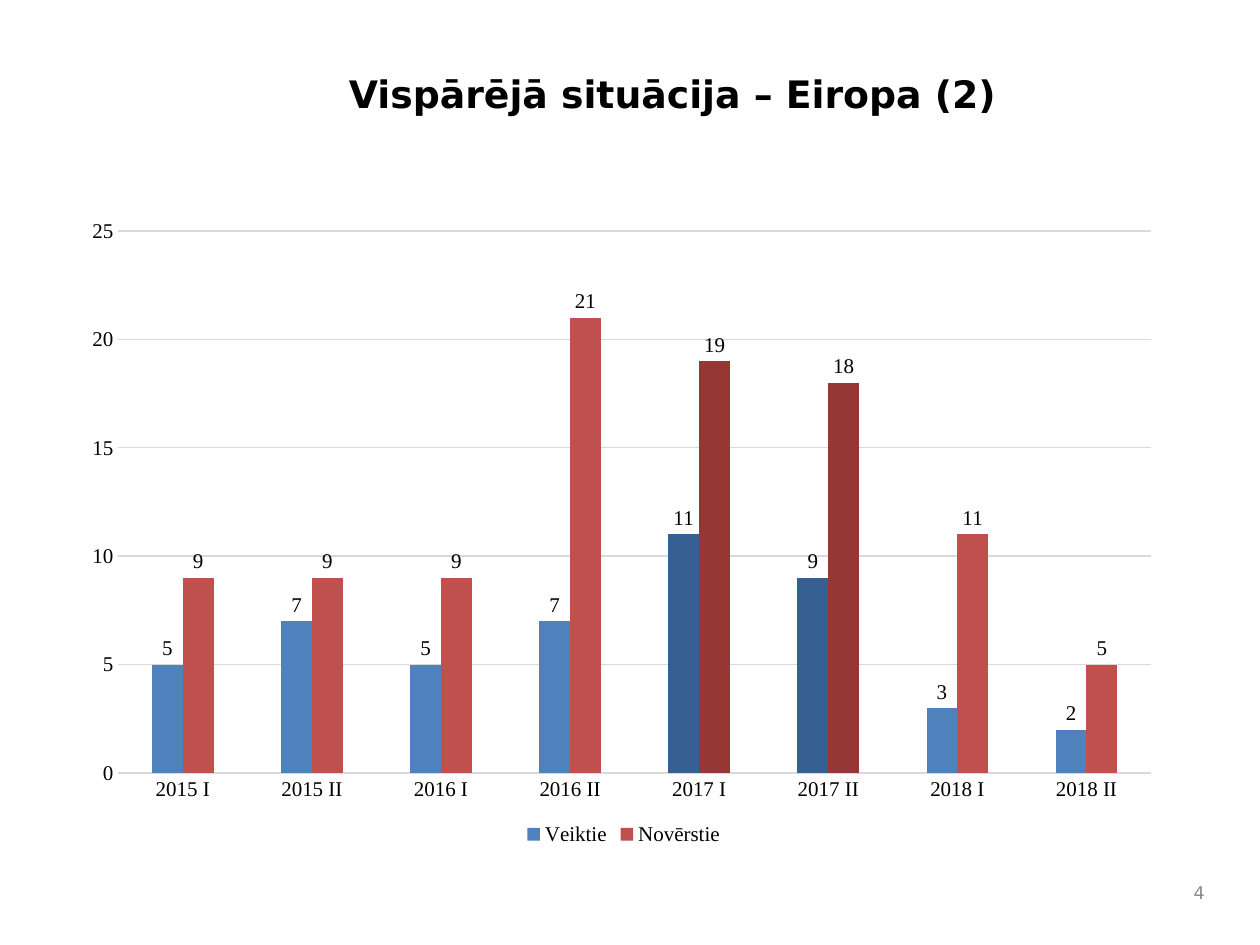
from dataclasses import dataclass

from lxml import etree
from pptx import Presentation
from pptx.chart.data import CategoryChartData
from pptx.dml.color import RGBColor
from pptx.enum.chart import (XL_CHART_TYPE, XL_LABEL_POSITION,
                             XL_LEGEND_POSITION, XL_TICK_MARK)
from pptx.enum.text import MSO_ANCHOR, PP_ALIGN
from pptx.oxml.ns import qn
from pptx.util import Inches, Pt

CLUSTERED = XL_CHART_TYPE.COLUMN_CLUSTERED
OUTSIDE_END = XL_LABEL_POSITION.OUTSIDE_END
BOTTOM = XL_LEGEND_POSITION.BOTTOM
NO_TICK = XL_TICK_MARK.NONE
TOP, MIDDLE = MSO_ANCHOR.TOP, MSO_ANCHOR.MIDDLE
LEFT, RIGHT = PP_ALIGN.LEFT, PP_ALIGN.RIGHT


@dataclass(frozen=True)
class Theme:
    text_font: str = "DejaVu Sans"
    chart_font: str = "Times New Roman"
    title_size: float = 21.6
    number_size: float = 10
    chart_size: float = 12
    black: str = "000000"
    grey: str = "898989"
    grid: str = "D9D9D9"
    # Normal and highlighted colour of each series
    series: tuple = (("4F81BD", "376092"), ("C0504D", "953735"))


THEME = Theme()
PERIODS = [f"{year} {half}" for year in range(2015, 2019) for half in ("I", "II")]
ATTACKS = {
    "Veiktie": (5, 7, 5, 7, 11, 9, 3, 2),
    "Novērstie": (9, 9, 9, 21, 19, 18, 11, 5),
}
HIGHLIGHT_YEAR = "2017"
PLOT_LAYOUT = {"x": 0.04, "y": 0.04, "w": 0.94, "h": 0.84}


def style_font(font, name, size, color, bold=False):
    values = {"name": name, "size": Pt(size), "bold": bold}
    for attribute, value in values.items():
        setattr(font, attribute, value)
    font.color.rgb = RGBColor.from_string(color)


def add_text(page, place, text, size, color, bold=False, align=LEFT, anchor=TOP):
    box = page.shapes.add_textbox(*map(Inches, place))
    frame = box.text_frame
    frame.word_wrap = True
    frame.vertical_anchor = anchor
    para = frame.paragraphs[0]
    para.alignment = align
    span = para.add_run()
    span.text = text
    style_font(span.font, THEME.text_font, size, color, bold)


def fill_solid(fill, color):
    fill.solid()
    fill.fore_color.rgb = RGBColor.from_string(color)


def style_line(line, color):
    line.color.rgb = RGBColor.from_string(color)
    line.width = Pt(0.75)


def style_chart_font(font):
    style_font(font, THEME.chart_font, THEME.chart_size, THEME.black)


def place_plot(chart):
    """Fix the inner plot area as fractions of the chart."""
    area = chart.plots[0]._element.getparent()
    for old in area.findall(qn("c:layout")):
        area.remove(old)
    layout = etree.Element(qn("c:layout"))
    manual = etree.SubElement(layout, qn("c:manualLayout"))
    settings = {"layoutTarget": "inner", "xMode": "edge", "yMode": "edge", **PLOT_LAYOUT}
    for tag, value in settings.items():
        etree.SubElement(manual, qn(f"c:{tag}")).set("val", str(value))
    area.insert(0, layout)


def style_axes(chart):
    category, value = chart.category_axis, chart.value_axis
    for axis in (category, value):
        axis.major_tick_mark = axis.minor_tick_mark = NO_TICK
        style_chart_font(axis.tick_labels.font)
    style_line(category.format.line, THEME.grid)
    value.format.line.fill.background()
    scale = {"minimum_scale": 0, "maximum_scale": 25, "major_unit": 5,
             "has_major_gridlines": True}
    for attribute, setting in scale.items():
        setattr(value, attribute, setting)
    style_line(value.major_gridlines.format.line, THEME.grid)


def style_series(series, color, highlight):
    series.invert_if_negative = False
    fill_solid(series.format.fill, color)
    for index, period in enumerate(PERIODS):
        if period.startswith(HIGHLIGHT_YEAR):
            fill_solid(series.points[index].format.fill, highlight)
    labels = series.data_labels
    labels.show_value = True
    labels.position = OUTSIDE_END
    style_chart_font(labels.font)


def add_attack_chart(page, place):
    data = CategoryChartData(number_format="General")
    data.categories = PERIODS
    for name, values in ATTACKS.items():
        data.add_series(name, values)
    chart = page.shapes.add_chart(CLUSTERED, *map(Inches, place), data).chart
    chart.has_title = False
    style_chart_font(chart.font)

    plot = chart.plots[0]
    for attribute, value in {"gap_width": 219, "overlap": 0, "vary_by_categories": False}.items():
        setattr(plot, attribute, value)
    for series, colors in zip(plot.series, THEME.series):
        style_series(series, *colors)
    style_axes(chart)
    place_plot(chart)

    chart.has_legend = True
    chart.legend.position = BOTTOM
    chart.legend.include_in_layout = False
    style_chart_font(chart.legend.font)


def main():
    deck = Presentation()
    deck.slide_width, deck.slide_height = Inches(10), Inches(7.5)
    page = deck.slides.add_slide(deck.slide_layouts[6])

    # Heading
    add_text(page, (2.67, 0.51, 6.67, 0.89), "Vispārējā situācija – Eiropa (2)",
             THEME.title_size, THEME.black, bold=True)
    # Slide number
    add_text(page, (9.33, 6.92, 0.33, 0.33), "4", THEME.number_size, THEME.grey,
             align=RIGHT, anchor=MIDDLE)
    # Attacks per half-year
    add_attack_chart(page, (0.59, 1.63, 8.72, 5.12))

    deck.save("out.pptx")


if __name__ == "__main__":
    main()
